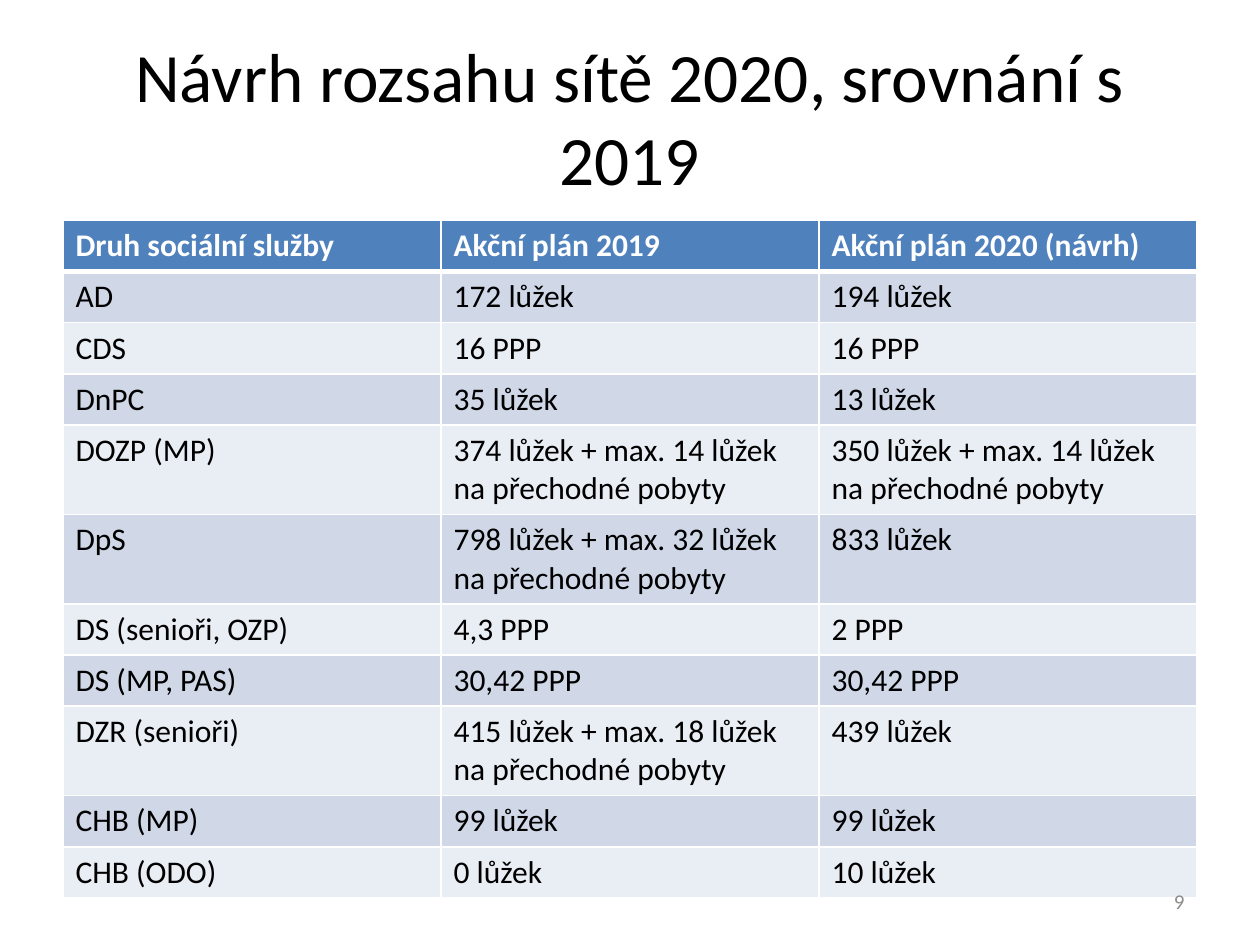
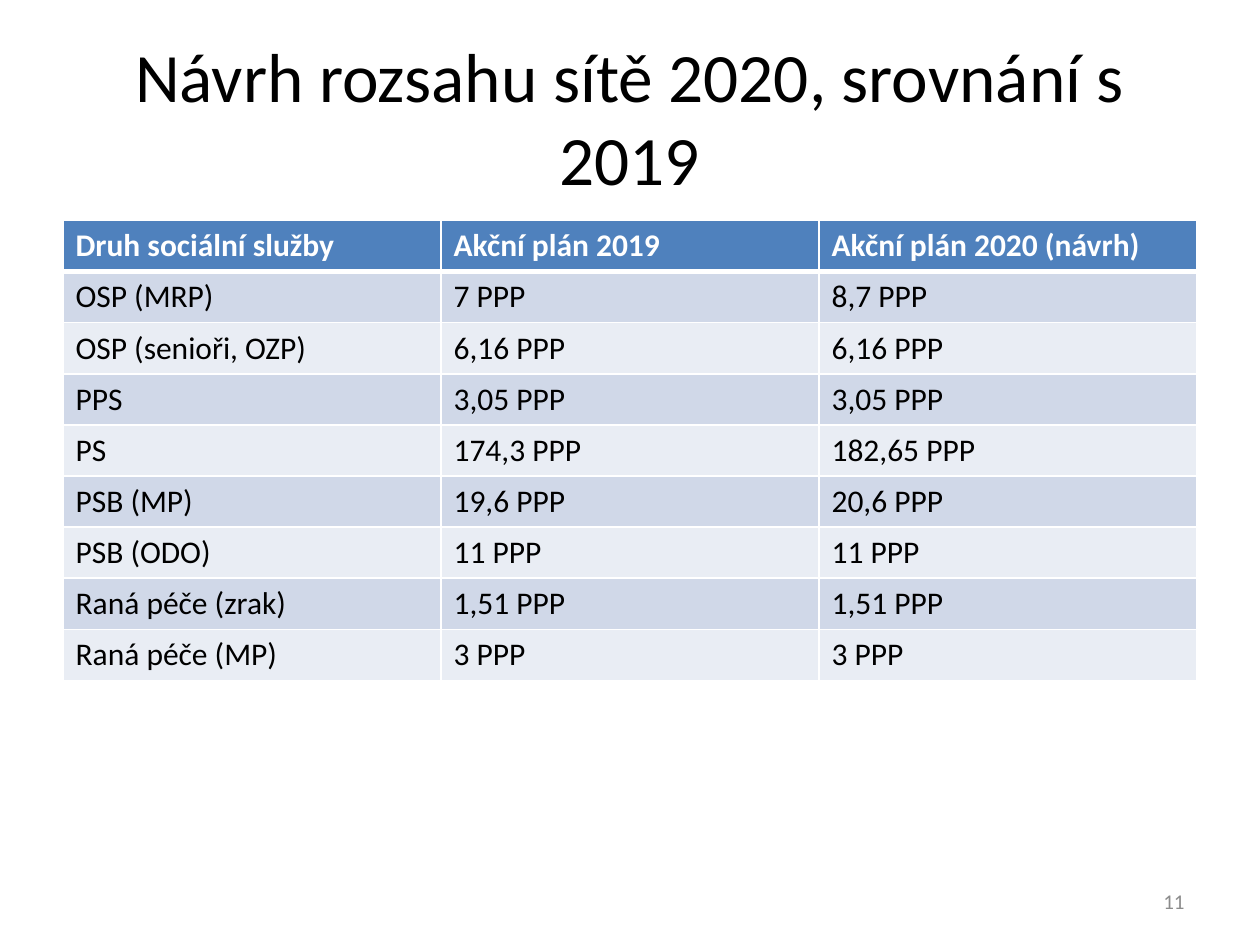
"""Build two slides comparing the 2020 social service network with 2019."""
from lxml.etree import SubElement
from pptx import Presentation
from pptx.dml.color import RGBColor
from pptx.enum.text import MSO_ANCHOR as ANCHOR, MSO_AUTO_SIZE as AUTO, PP_ALIGN as ALIGN
from pptx.oxml.ns import qn
from pptx.util import Inches, Pt

BLACK = RGBColor(0x00, 0x00, 0x00)
WHITE = RGBColor(0xFF, 0xFF, 0xFF)
GREY = RGBColor(0x8C, 0x8C, 0x8C)
BLUE = RGBColor(0x4F, 0x81, 0xBD)
BAND_DARK = RGBColor(0xD0, 0xD8, 0xE8)
BAND_LIGHT = RGBColor(0xE9, 0xED, 0xF4)

TITLE = "Návrh rozsahu sítě 2020, srovnání s 2019"
HEADER = ("Druh sociální služby", "Akční plán 2019", "Akční plán 2020 (návrh)")
ROW_HEIGHT = int(Inches(3.65) / 9)

SLIDES = [
    ("9", [
        ("AD", "172 lůžek", "194 lůžek"),
        ("CDS", "16 PPP", "16 PPP"),
        ("DnPC", "35 lůžek", "13 lůžek"),
        ("DOZP (MP)", "374 lůžek + max. 14 lůžek na přechodné pobyty",
         "350 lůžek + max. 14 lůžek na přechodné pobyty"),
        ("DpS", "798 lůžek + max. 32 lůžek na přechodné pobyty", "833 lůžek"),
        ("DS (senioři, OZP)", "4,3 PPP", "2 PPP"),
        ("DS (MP, PAS)", "30,42 PPP", "30,42 PPP"),
        ("DZR (senioři)", "415 lůžek + max. 18 lůžek na přechodné pobyty", "439 lůžek"),
        ("CHB (MP)", "99 lůžek", "99 lůžek"),
        ("CHB (ODO)", "0 lůžek", "10 lůžek"),
    ]),
    ("11", [
        ("OSP (MRP)", "7 PPP", "8,7 PPP"),
        ("OSP (senioři, OZP)", "6,16 PPP", "6,16 PPP"),
        ("PPS", "3,05 PPP", "3,05 PPP"),
        ("PS", "174,3 PPP", "182,65 PPP"),
        ("PSB (MP)", "19,6 PPP", "20,6 PPP"),
        ("PSB (ODO)", "11 PPP", "11 PPP"),
        ("Raná péče (zrak)", "1,51 PPP", "1,51 PPP"),
        ("Raná péče (MP)", "3 PPP", "3 PPP"),
    ]),
]


def write(tf, text, size=18, color=BLACK, bold=False, align=ALIGN.LEFT, anchor=ANCHOR.TOP):
    tf.word_wrap = True
    tf.vertical_anchor = anchor
    p = tf.paragraphs[0]
    p.alignment = align
    r = p.add_run()
    r.text = text
    r.font.name = "Calibri"
    r.font.size = Pt(size)
    r.font.bold = bold
    r.font.color.rgb = color


def add_borders(cell, **widths):
    tcPr = cell._tc.get_or_add_tcPr()
    for side in "LRTB":
        ln = SubElement(tcPr, qn(f"a:ln{side}"), w=str(Pt(widths.get(side, 1))))
        SubElement(SubElement(ln, qn("a:solidFill")), qn("a:srgbClr"), val=str(WHITE))


prs = Presentation()
prs.slide_width, prs.slide_height = Inches(10), Inches(7.5)

for number, services in SLIDES:
    s = prs.slides.add_slide(prs.slide_layouts[5])
    title = s.shapes.title
    title.left, title.top = Inches(0.5), Inches(0.3)
    title.width, title.height = Inches(9), Inches(1.25)
    title.text_frame.auto_size = AUTO.NONE
    write(title.text_frame, TITLE, size=39.6, align=ALIGN.CENTER, anchor=ANCHOR.MIDDLE)

    rows = [HEADER, *services]
    table = s.shapes.add_table(len(rows), len(HEADER), Inches(0.5), Inches(1.75),
                               Inches(9), ROW_HEIGHT * len(rows)).table
    for i, row in enumerate(rows):
        table.rows[i].height = ROW_HEIGHT
        is_header = i == 0
        fill = BLUE if is_header else BAND_DARK if i % 2 else BAND_LIGHT
        for j, text in enumerate(row):
            cell = table.cell(i, j)
            add_borders(cell, T=3 if i == 1 else 1, B=3 if is_header else 1)
            cell.fill.solid()
            cell.fill.fore_color.rgb = fill
            write(cell.text_frame, text, color=WHITE if is_header else BLACK, bold=is_header)

    sp = s.shapes.add_textbox(Inches(7.17), Inches(6.95), Inches(2.33), Inches(0.4))
    write(sp.text_frame, number, size=12, color=GREY, align=ALIGN.RIGHT, anchor=ANCHOR.MIDDLE)

prs.save("out.pptx")
